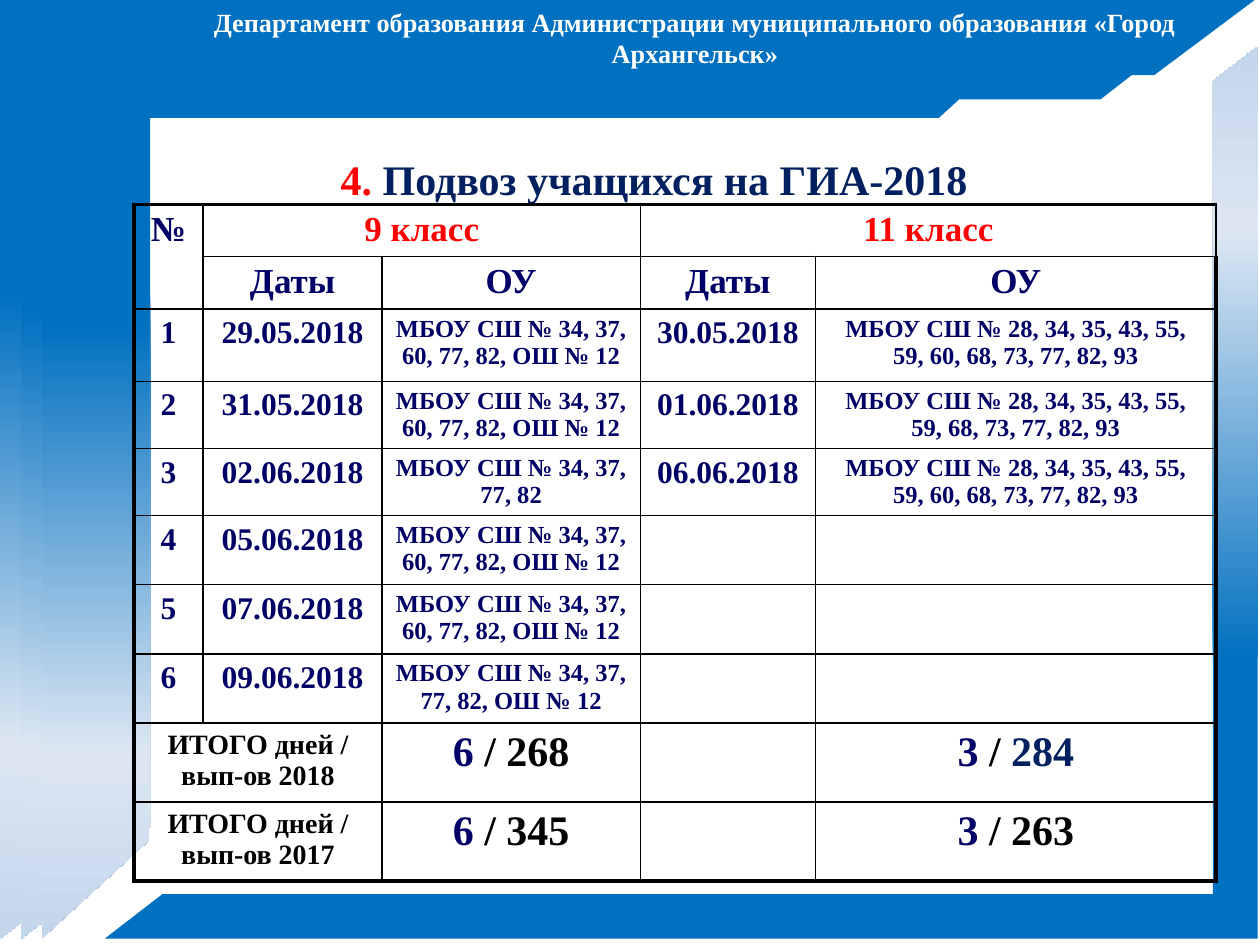
from lxml.etree import SubElement
from pptx import Presentation
from pptx.dml.color import RGBColor
from pptx.enum.shapes import MSO_SHAPE
from pptx.enum.text import MSO_ANCHOR, PP_ALIGN
from pptx.oxml import parse_xml
from pptx.oxml.ns import nsdecls, qn
from pptx.util import Pt

FONT = "Times New Roman"
NAVY, DEEP, RED, BLACK, WHITE = "000066", "002060", "FF0000", "000000", "FFFFFF"

HEADER = "Департамент образования Администрации муниципального образования «Город Архангельск»"
TITLE = [("4.", RED), (" Подвоз учащихся на ГИА-2018", DEEP)]

# left, top, width, height, rotation, bar thickness, side thickness
FRAMES = [
    (0, 0, 717, 536.4, 0, 0.08, 0.16),
    (12.2, 15.1, 670.3, 521.3, 0, 0.08, 0.11),
    (23.8, 26.6, 557.3, 509.8, 0, 0.08, 0.12),
    (59.8, 26.6, 658.8, 509.8, 180, 0.05, 0.05),
]
GRADIENT = [(31, "0070C0"), (79, "DCE6F2"), (100, "C4D6EB"), (100, "FFEBFA")]

TABLE_LEFT, TABLE_TOP = 76.5, 116.8
COLUMNS = [39.6, 102.2, 147.6, 100.1, 229]
ROWS = [29.7, 30.2, 41.4, 38.3, 38.3, 39.5, 39.5, 39.5, 45.2, 45.2]
GROUPS = ["№", "9 класс", "", "11 класс", ""]
HEADINGS = ["", "Даты", "ОУ", "Даты", "ОУ"]
SCHOOLS_9 = "МБОУ СШ № 34, 37, 60, 77, 82, ОШ № 12"
SCHOOLS_11 = "МБОУ СШ № 28, 34, 35, 43, 55, 59, 60, 68, 73, 77, 82, 93"
DAYS = [
    ("1", "29.05.2018", SCHOOLS_9, "30.05.2018", SCHOOLS_11),
    ("2", "31.05.2018", SCHOOLS_9, "01.06.2018",
     "МБОУ СШ № 28, 34, 35, 43, 55, 59, 68, 73, 77, 82, 93"),
    ("3", "02.06.2018", "МБОУ СШ № 34, 37, 77, 82", "06.06.2018", SCHOOLS_11),
    ("4", "05.06.2018", SCHOOLS_9, "", ""),
    ("5", "07.06.2018", SCHOOLS_9, "", ""),
    ("6", "09.06.2018", "МБОУ СШ № 34, 37, 77, 82, ОШ № 12", "", ""),
]
DAY_SIZES = [18, 18, 14, 18, 14]
TOTALS = [
    ("ИТОГО дней / вып-ов 2018", [("6 ", NAVY), ("/ 268", BLACK)],
     [("3 ", NAVY), ("/ ", BLACK), ("284", DEEP)]),
    ("ИТОГО дней / вып-ов 2017", [("6 ", NAVY), ("/ 345", BLACK)],
     [("3 ", NAVY), ("/ 263", BLACK)]),
]
MERGES = [(0, 0, 1, 0), (0, 1, 0, 2), (0, 3, 0, 4), (8, 0, 8, 1), (9, 0, 9, 1)]


def rgb(color):
    return RGBColor.from_string(color)


def write(text_frame, runs, size):
    """Fill the first paragraph with centred bold (text, colour) runs."""
    paragraph = text_frame.paragraphs[0]
    paragraph.alignment = PP_ALIGN.CENTER
    for text, color in runs:
        run = paragraph.add_run()
        run.text = text
        font = run.font
        font.name, font.size, font.bold = FONT, Pt(size), True
        font.color.rgb = rgb(color)


def add_frame(slide, left, top, width, height, rotation, bar, side):
    frame = slide.shapes.add_shape(
        MSO_SHAPE.HALF_FRAME, Pt(left), Pt(top), Pt(width), Pt(height))
    frame.adjustments[0], frame.adjustments[1] = bar, side
    frame.rotation = rotation
    frame.shadow.inherit = False
    frame.line.fill.background()
    stops = "".join(
        f'<a:gs pos="{position * 1000}"><a:srgbClr val="{color}"/></a:gs>'
        for position, color in GRADIENT)
    gradient = parse_xml(
        f'<a:gradFill {nsdecls("a")} rotWithShape="1"><a:gsLst>{stops}</a:gsLst>'
        '<a:lin ang="5400000" scaled="0"/></a:gradFill>')
    frame.element.spPr.find(qn("a:prstGeom")).addnext(gradient)


def set_borders(cell, row, column):
    """Draw thin inner lines and a thick line round the table."""
    outer = {"L": column == 0, "R": column == len(COLUMNS) - 1,
             "T": row == 0, "B": row == len(ROWS) - 1}
    properties = cell._tc.get_or_add_tcPr()
    for index, (side, thick) in enumerate(outer.items()):
        line = parse_xml(
            f'<a:ln{side} {nsdecls("a")} w="{Pt(2.25 if thick else 1)}"/>')
        fill = SubElement(line, qn("a:solidFill"))
        SubElement(fill, qn("a:srgbClr")).set("val", BLACK)
        properties.insert(index, line)


def add_schedule(slide):
    table = slide.shapes.add_table(
        len(ROWS), len(COLUMNS), Pt(TABLE_LEFT), Pt(TABLE_TOP),
        Pt(sum(COLUMNS)), Pt(sum(ROWS))).table
    table.first_row = table.horz_banding = False
    for column, width in zip(table.columns, COLUMNS):
        column.width = Pt(width)
    for row, height in zip(table.rows, ROWS):
        row.height = Pt(height)
    for row in range(len(ROWS)):
        for column in range(len(COLUMNS)):
            cell = table.cell(row, column)
            cell.fill.background()
            set_borders(cell, row, column)
    for top, left, bottom, right in MERGES:
        table.cell(top, left).merge(table.cell(bottom, right))

    for row, texts in enumerate([GROUPS, HEADINGS, *DAYS]):
        sizes = [20] * len(COLUMNS) if row < 2 else DAY_SIZES
        for column, (text, size) in enumerate(zip(texts, sizes)):
            color = RED if row == 0 and column else NAVY
            if text:
                write(table.cell(row, column).text_frame, [(text, color)], size)
    for row, (label, total_9, total_11) in enumerate(TOTALS, 2 + len(DAYS)):
        write(table.cell(row, 0).text_frame, [(label, BLACK)], 16)
        write(table.cell(row, 2).text_frame, total_9, 24)
        write(table.cell(row, 4).text_frame, total_11, 24)


def main():
    presentation = Presentation()
    presentation.slide_width, presentation.slide_height = Pt(720), Pt(540)
    slide = presentation.slides.add_slide(presentation.slide_layouts[5])
    for frame in FRAMES:
        add_frame(slide, *frame)

    header = slide.shapes.add_textbox(Pt(68.4), Pt(0), Pt(657.4), Pt(25.2))
    header.text_frame.word_wrap = True
    write(header.text_frame, [(HEADER, WHITE)], 15)

    title = slide.shapes.title
    title.left, title.top, title.width, title.height = Pt(54), Pt(65.5), Pt(649.4), Pt(33.8)
    title_frame = title.text_frame
    title_frame.vertical_anchor = MSO_ANCHOR.TOP
    title_frame.margin_top, title_frame.margin_bottom = Pt(22), Pt(0)
    title_frame.margin_right = Pt(17)
    write(title_frame, TITLE, 24)
    header.element.addnext(title.element)  # the title lies above the frames

    add_schedule(slide)
    presentation.save("out.pptx")


if __name__ == "__main__":
    main()
